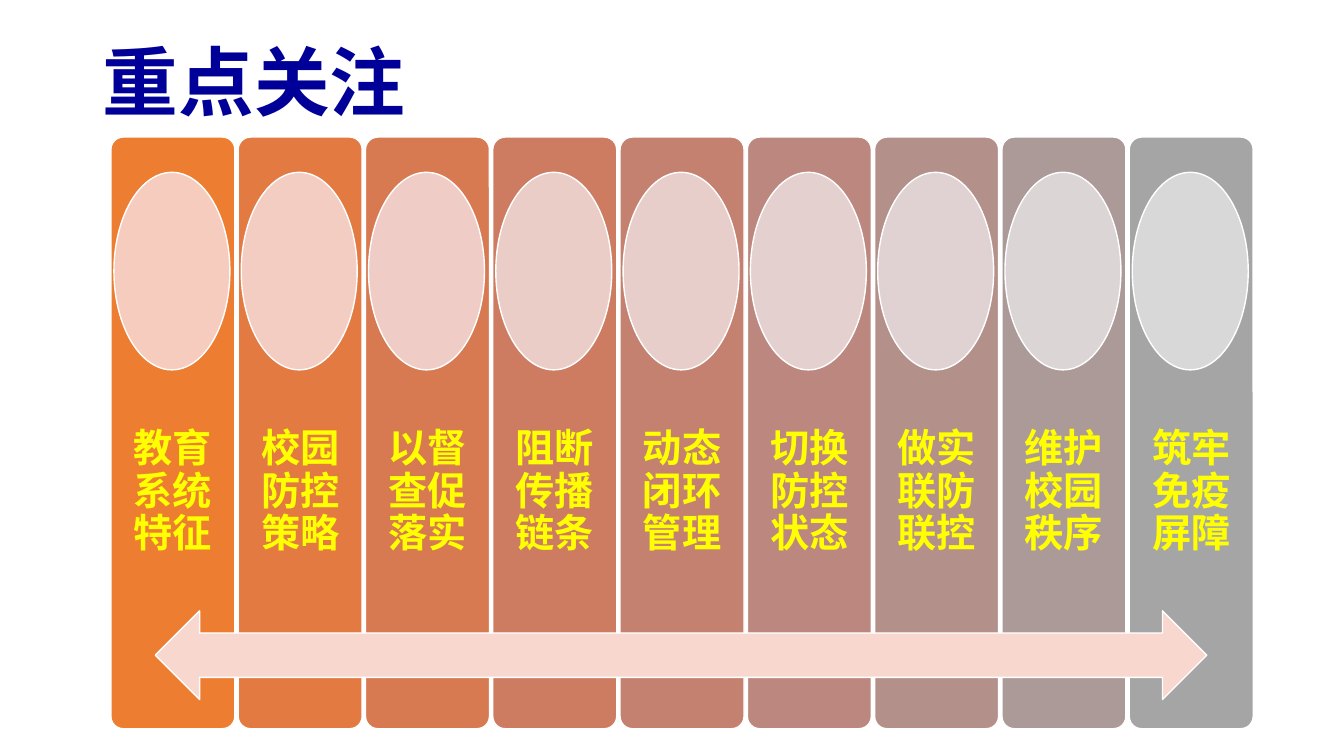
"""Build the key focus slide: nine themed columns joined by a double arrow."""
import pptx
import pptx.util
import pptx.dml.color
import pptx.enum.shapes
import pptx.enum.text
import lxml.etree

Inches = pptx.util.Inches
RGBColor = pptx.dml.color.RGBColor
MSO_SHAPE = pptx.enum.shapes.MSO_SHAPE
PP_ALIGN = pptx.enum.text.PP_ALIGN
MSO_ANCHOR = pptx.enum.text.MSO_ANCHOR

FONT = "Noto Sans CJK SC"
NAVY = RGBColor(0x00, 0x00, 0x99)
YELLOW = RGBColor(0xFF, 0xFF, 0x00)
WHITE = RGBColor(0xFF, 0xFF, 0xFF)
PALE_PINK = RGBColor(0xF8, 0xD7, 0xCE)

TOPICS = [
    ("教育系统特征", RGBColor(0xED, 0x7D, 0x31), RGBColor(0xF6, 0xCC, 0xBE)),
    ("校园防控策略", RGBColor(0xE2, 0x7A, 0x42), RGBColor(0xF3, 0xCC, 0xC2)),
    ("以督查促落实", RGBColor(0xD8, 0x7A, 0x51), RGBColor(0xEF, 0xCC, 0xC5)),
    ("阻断传播链条", RGBColor(0xCE, 0x7C, 0x61), RGBColor(0xEB, 0xCD, 0xC8)),
    ("动态闭环管理", RGBColor(0xC4, 0x81, 0x70), RGBColor(0xE8, 0xCE, 0xCB)),
    ("切换防控状态", RGBColor(0xBC, 0x87, 0x7E), RGBColor(0xE4, 0xD0, 0xCE)),
    ("做实联防联控", RGBColor(0xB4, 0x90, 0x8B), RGBColor(0xE0, 0xD2, 0xD2)),
    ("维护校园秩序", RGBColor(0xAC, 0x9A, 0x99), RGBColor(0xDC, 0xD5, 0xD5)),
    ("筑牢免疫屏障", RGBColor(0xA5, 0xA5, 0xA5), RGBColor(0xD8, 0xD8, 0xD8)),
]
FIRST_LEFT, LAST_LEFT = 1.1, 11.2
PITCH = (LAST_LEFT - FIRST_LEFT) / (len(TOPICS) - 1)
COLUMN_WIDTH = 1.23


def write(holder, text, size, color, align, anchor, margins):
    frame = holder.text_frame
    frame.word_wrap = True
    frame.auto_size = pptx.enum.text.MSO_AUTO_SIZE.NONE
    frame.vertical_anchor = anchor
    frame.margin_left = frame.margin_right = Inches(margins[0])
    frame.margin_top = frame.margin_bottom = Inches(margins[1])
    paragraph = frame.paragraphs[0]
    paragraph.alignment = align
    paragraph.line_spacing = 0.9
    run = paragraph.add_run()
    run.text = text
    run.font.size = pptx.util.Pt(size)
    run.font.bold = True
    run.font.color.rgb = color
    run.font.name = FONT
    latin = run.font._element.find(pptx.oxml.ns.qn("a:latin"))
    east_asian = lxml.etree.Element(pptx.oxml.ns.qn("a:ea"), typeface=FONT)
    latin.addnext(east_asian)


def add_filled(kind, left, top, width, height, fill):
    shape = slide.shapes.add_shape(
        kind, Inches(left), Inches(top), Inches(width), Inches(height))
    shape.shadow.inherit = False
    shape.fill.solid()
    shape.fill.fore_color.rgb = fill
    shape.line.color.rgb = WHITE
    shape.line.width = pptx.util.Pt(1)
    return shape


deck = pptx.Presentation()
deck.slide_width = Inches(13.33)
deck.slide_height = Inches(7.5)
slide = deck.slides.add_slide(deck.slide_layouts[5])

heading = slide.shapes.title
heading.left, heading.top = Inches(0.92), Inches(0.4)
heading.width, heading.height = Inches(11.5), Inches(1.45)
write(heading, "重点关注", size=54, color=NAVY, align=PP_ALIGN.LEFT,
      anchor=MSO_ANCHOR.TOP, margins=(0.1, 0.05))

for index, (topic, column_color, oval_color) in enumerate(TOPICS):
    left = FIRST_LEFT + index * PITCH
    column = add_filled(MSO_SHAPE.ROUNDED_RECTANGLE, left, 1.36,
                        COLUMN_WIDTH, 5.87, column_color)
    column.adjustments[0] = 0.1
    label = slide.shapes.add_textbox(
        Inches(left), Inches(3.71), Inches(COLUMN_WIDTH), Inches(2.35))
    write(label, topic, size=28, color=YELLOW, align=PP_ALIGN.CENTER,
          anchor=MSO_ANCHOR.MIDDLE, margins=(0.22, 0.22))
    add_filled(MSO_SHAPE.OVAL, left + 0.03, 1.71, 1.15, 1.96, oval_color)

add_filled(MSO_SHAPE.LEFT_RIGHT_ARROW, 1.54, 6.06, 10.43, 0.88, PALE_PINK)

deck.save("out.pptx")
